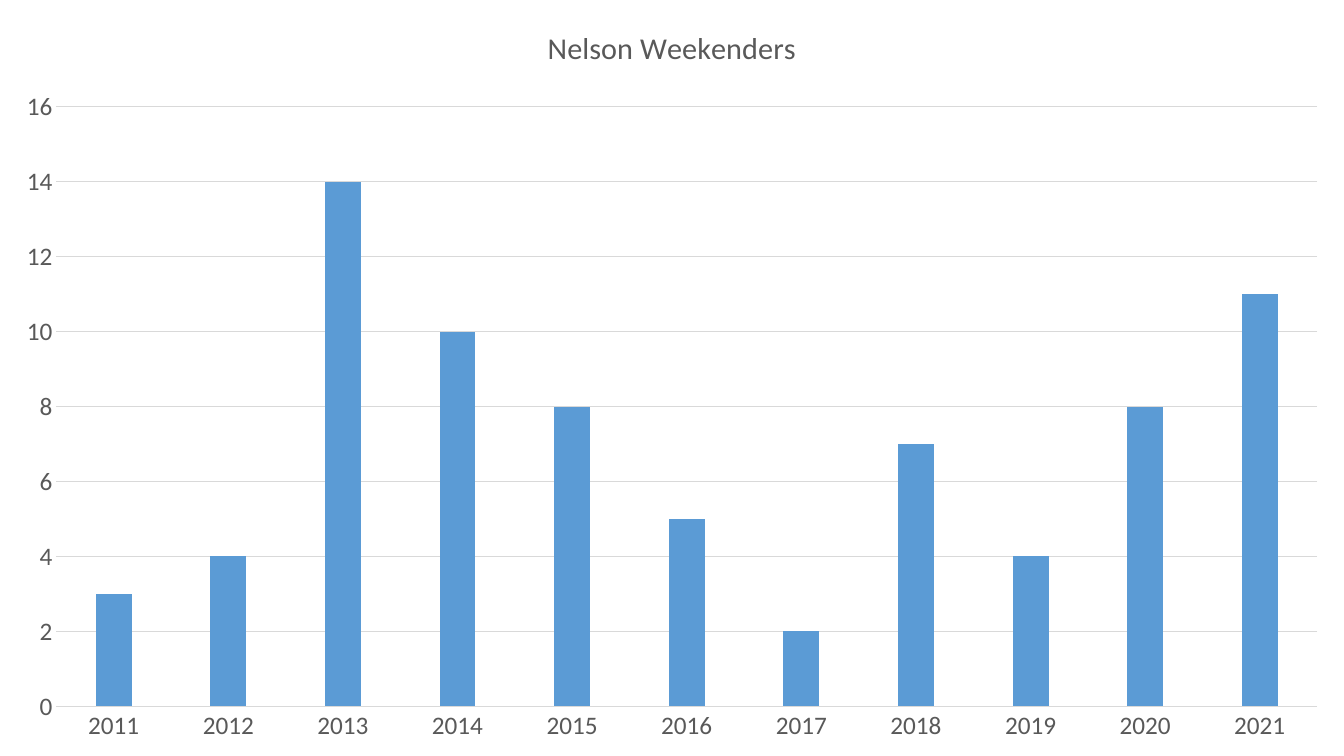
from pptx import Presentation
from pptx.chart.data import CategoryChartData
from pptx.dml.color import RGBColor
from pptx.enum.chart import XL_CHART_TYPE, XL_TICK_MARK
from pptx.util import Cm, Pt


def color(value):
    return RGBColor.from_string(value)


class ChartPage:
    font_name = "Calibri"
    text_color = "595959"
    line_color = "D9D9D9"
    bar_color = "5B9BD5"

    def __init__(self, deck):
        self.deck = deck
        self.page = deck.slides.add_slide(deck.slide_layouts[6])

    def style_font(self, font, size):
        font.name = self.font_name
        font.size = Pt(size)
        font.bold = False
        font.color.rgb = color(self.text_color)

    def style_line(self, line):
        line.color.rgb = color(self.line_color)
        line.width = Pt(0.75)

    def add_title(self, chart, title):
        chart.has_title = True
        frame = chart.chart_title.text_frame
        frame.text = title
        self.style_font(frame.paragraphs[0].runs[0].font, 21.6)
        chart.chart_title.include_in_layout = False

    def style_axis(self, axis):
        axis.major_tick_mark = XL_TICK_MARK.NONE
        axis.minor_tick_mark = XL_TICK_MARK.NONE
        self.style_font(axis.tick_labels.font, 18)

    def add_columns(self, title, categories, values):
        data = CategoryChartData()
        data.categories = categories
        data.add_series(title, values)
        chart = self.page.shapes.add_chart(
            XL_CHART_TYPE.COLUMN_CLUSTERED, Cm(0), Cm(0),
            self.deck.slide_width, self.deck.slide_height, data,
        ).chart
        chart.has_legend = False
        self.style_font(chart.font, 18)
        self.add_title(chart, title)

        self.style_axis(chart.category_axis)
        self.style_line(chart.category_axis.format.line)
        self.style_axis(chart.value_axis)
        chart.value_axis.format.line.fill.background()
        chart.value_axis.minimum_scale = 0
        chart.value_axis.maximum_scale = 16
        chart.value_axis.major_unit = 2
        self.style_line(chart.value_axis.major_gridlines.format.line)

        plot = chart.plots[0]
        plot.vary_by_categories = False
        plot.gap_width = 219
        plot.overlap = -27
        fill = plot.series[0].format.fill
        fill.solid()
        fill.fore_color.rgb = color(self.bar_color)


def main():
    deck = Presentation()
    deck.slide_width = Cm(33.87)
    deck.slide_height = Cm(19.05)
    years = [str(year) for year in range(2011, 2022)]
    weekenders = [3, 4, 14, 10, 8, 5, 2, 7, 4, 8, 11]
    ChartPage(deck).add_columns("Nelson Weekenders", years, weekenders)
    deck.save("out.pptx")


if __name__ == "__main__":
    main()
